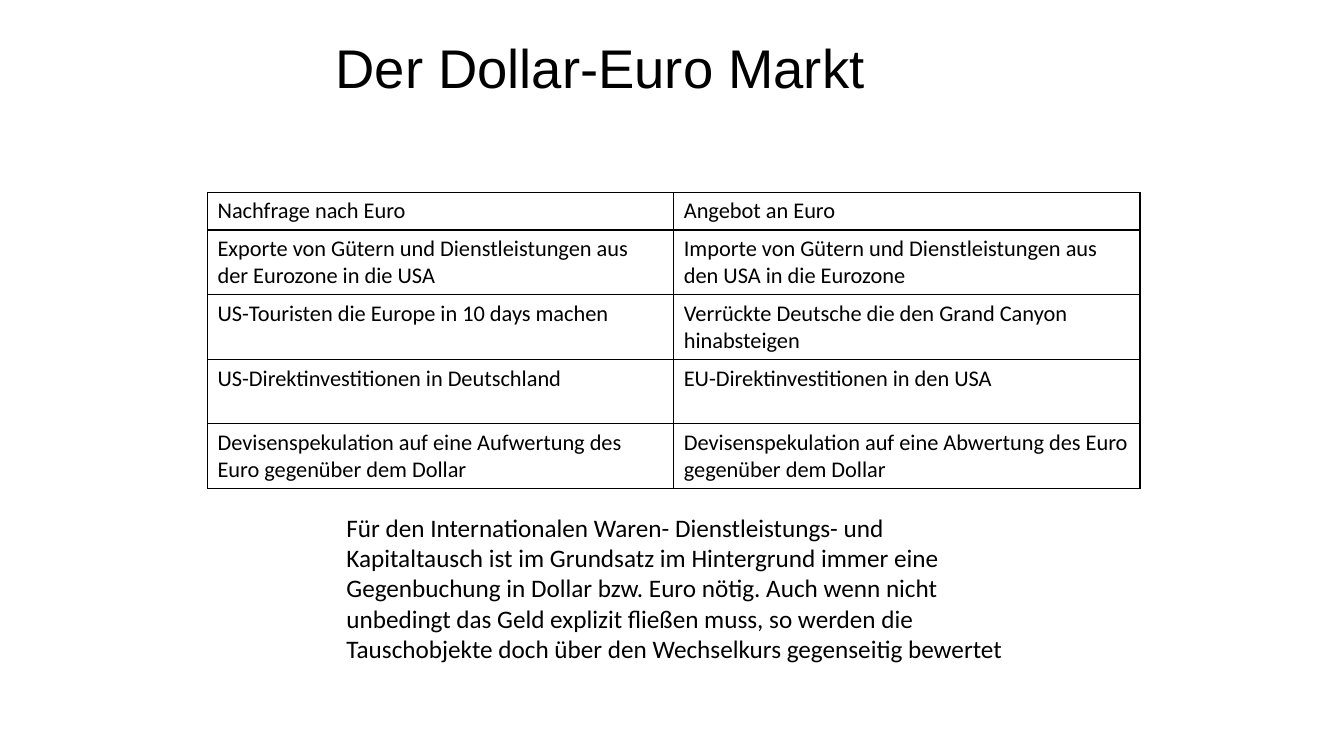
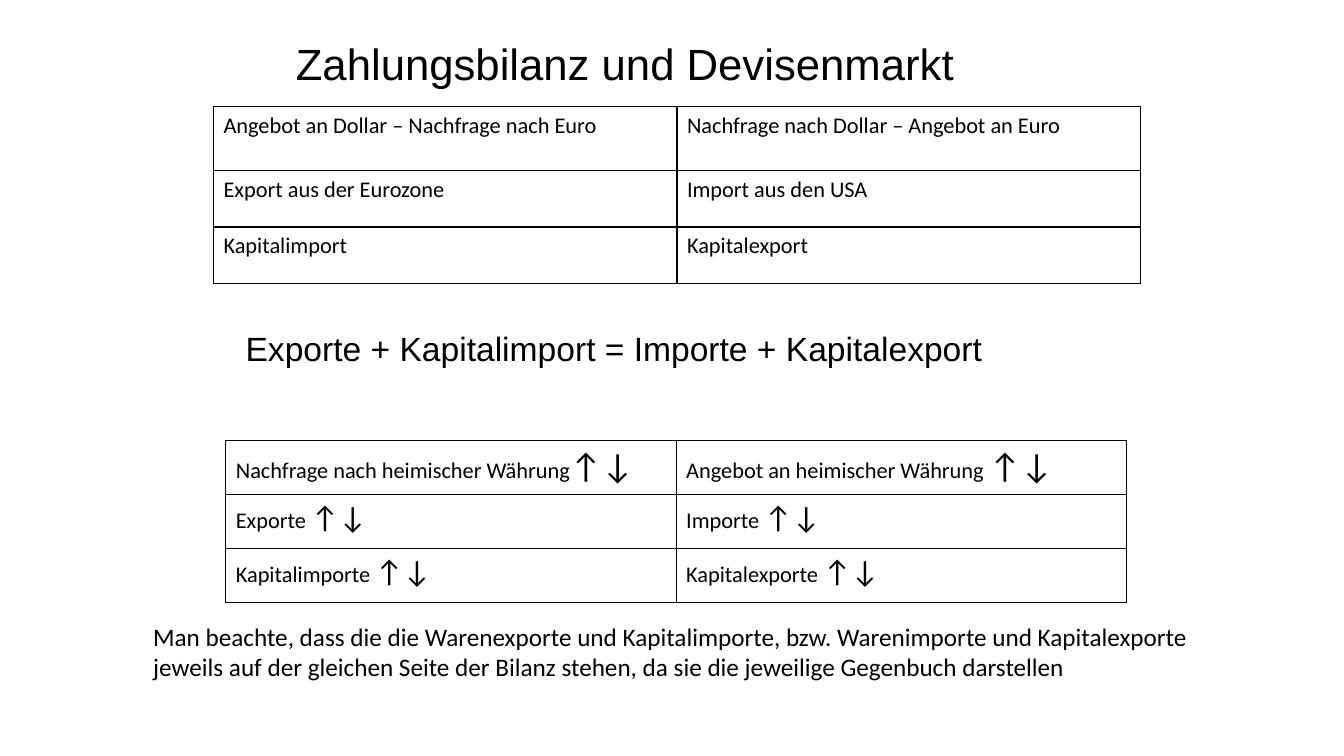
from dataclasses import dataclass

from lxml import etree
from pptx import Presentation
from pptx import util as u
from pptx.dml.color import RGBColor
from pptx.enum import text
from pptx.oxml.ns import qn

BLACK = RGBColor(0x00, 0x00, 0x00)
HEADING_FONT = "Arial"
BODY_FONT = "Calibri"
CELL_SIZE = 16
NOTE_SIZE = 18
ARROWS = "↑↓"
TITLE_ONLY = 5


@dataclass(frozen=True)
class Box:
    """Place and size in centimetres."""
    left: float
    top: float
    width: float
    height: float

    def lengths(self):
        return tuple(u.Cm(v) for v in (self.left, self.top, self.width, self.height))


@dataclass(frozen=True)
class Ledger:
    """Two-sided table; arrow_sizes gives the size of the arrows in each row."""
    left: float
    top: float
    width: float
    row_heights: tuple[float, ...]
    rows: tuple[tuple[str, str], ...]
    arrow_sizes: tuple[int, ...] = ()


def style_font(font, name: str, size: float) -> None:
    font.name = name
    font.size = u.Pt(size)
    font.color.rgb = BLACK


def add_titled_slide(prs, title: str, box: Box, size: float):
    slide = prs.slides.add_slide(prs.slide_layouts[TITLE_ONLY])
    heading = slide.shapes.title
    heading.left, heading.top, heading.width, heading.height = box.lengths()
    frame = heading.text_frame
    frame.text = title
    frame.auto_size = text.MSO_AUTO_SIZE.NONE
    frame.vertical_anchor = text.MSO_ANCHOR.MIDDLE
    paragraph = frame.paragraphs[0]
    paragraph.alignment = text.PP_ALIGN.CENTER
    style_font(paragraph.font, HEADING_FONT, size)
    return slide


def add_statement(slide, statement: str, box: Box, font: str, size: float) -> None:
    frame = slide.shapes.add_textbox(*box.lengths()).text_frame
    frame.word_wrap = True
    frame.text = statement
    style_font(frame.paragraphs[0].font, font, size)


def outline_cell(cell) -> None:
    properties = cell._tc.get_or_add_tcPr()
    for position, side in enumerate(("lnL", "lnR", "lnT", "lnB")):
        line = etree.Element(qn(f"a:{side}"), w=str(u.Pt(1)))
        fill = etree.SubElement(line, qn("a:solidFill"))
        etree.SubElement(fill, qn("a:srgbClr"), val=str(BLACK))
        properties.insert(position, line)


def add_ledger(slide, ledger: Ledger) -> None:
    box = Box(ledger.left, ledger.top, ledger.width, sum(ledger.row_heights))
    table = slide.shapes.add_table(len(ledger.rows), 2, *box.lengths()).table
    table.first_row = table.horz_banding = False
    for r, entries in enumerate(ledger.rows):
        table.rows[r].height = u.Cm(ledger.row_heights[r])
        for c, entry in enumerate(entries):
            cell = table.cell(r, c)
            cell.fill.background()
            outline_cell(cell)
            paragraph = cell.text_frame.paragraphs[0]
            style_font(paragraph.font, BODY_FONT, CELL_SIZE)
            label = paragraph.add_run()
            label.text = entry
            if ledger.arrow_sizes:
                label.font.size = u.Pt(CELL_SIZE)
                arrows = paragraph.add_run()
                arrows.text = ARROWS
                arrows.font.size = u.Pt(ledger.arrow_sizes[r])


# Content of the tables
EURO_MARKET = Ledger(5.23, 4.85, 23.5, (0.94,) + (1.61,) * 4, (
    ("Nachfrage nach Euro", "Angebot an Euro"),
    ("Exporte von Gütern und Dienstleistungen aus der Eurozone in die USA",
     "Importe von Gütern und Dienstleistungen aus den USA in die Eurozone"),
    ("US-Touristen die Europe in 10 days machen",
     "Verrückte Deutsche die den Grand Canyon hinabsteigen"),
    ("US-Direktinvestitionen in Deutschland", "EU-Direktinvestitionen in den USA"),
    ("Devisenspekulation auf eine Aufwertung des Euro gegenüber dem Dollar",
     "Devisenspekulation auf eine Abwertung des Euro gegenüber dem Dollar"),
))
CURRENCY_SIDES = Ledger(5.38, 2.69, 23.36, (1.61, 1.42, 1.42), (
    ("Angebot an Dollar – Nachfrage nach Euro", "Nachfrage nach Dollar – Angebot an Euro"),
    ("Export aus der Eurozone", "Import aus den USA"),
    ("Kapitalimport", "Kapitalexport"),
))
HOME_CURRENCY = Ledger(5.69, 11.1, 22.7, (1.36,) * 3, (
    ("Nachfrage nach heimischer Währung", "Angebot an heimischer Währung "),
    ("Exporte ", "Importe "),
    ("Kapitalimporte ", "Kapitalexporte "),
), arrow_sizes=(25, 22, 22))


def main() -> None:
    prs = Presentation()
    prs.slide_width, prs.slide_height = u.Cm(33.87), u.Cm(19.05)

    # Dollar-euro market
    market = add_titled_slide(prs, "Der Dollar-Euro Markt ", Box(4.52, 0.8, 21.59, 1.78), 38.9)
    add_ledger(market, EURO_MARKET)
    add_statement(
        market,
        "Für den Internationalen Waren- Dienstleistungs- und Kapitaltausch ist im Grundsatz "
        "im Hintergrund immer eine Gegenbuchung in Dollar bzw. Euro nötig. Auch wenn nicht "
        "unbedingt das Geld explizit fließen muss, so werden die Tauschobjekte doch über den "
        "Wechselkurs gegenseitig bewertet",
        Box(8.48, 12.78, 17.37, 4.11), BODY_FONT, NOTE_SIZE)

    # Balance of payments
    balance = add_titled_slide(
        prs, "Zahlungsbilanz und Devisenmarkt", Box(5.38, 0.69, 20.73, 1.78), 31.2)
    add_ledger(balance, CURRENCY_SIDES)
    add_statement(balance, "Exporte + Kapitalimport = Importe + Kapitalexport",
                  Box(5.94, 8.13, 22.17, 2.21), HEADING_FONT, 24)
    add_ledger(balance, HOME_CURRENCY)
    add_statement(
        balance,
        "Man beachte, dass die die Warenexporte und Kapitalimporte, bzw. Warenimporte und "
        "Kapitalexporte jeweils auf der gleichen Seite der Bilanz stehen, da sie die "
        "jeweilige Gegenbuch darstellen",
        Box(3.61, 15.52, 26.87, 1.8), BODY_FONT, NOTE_SIZE)

    prs.save("out.pptx")


if __name__ == "__main__":
    main()
